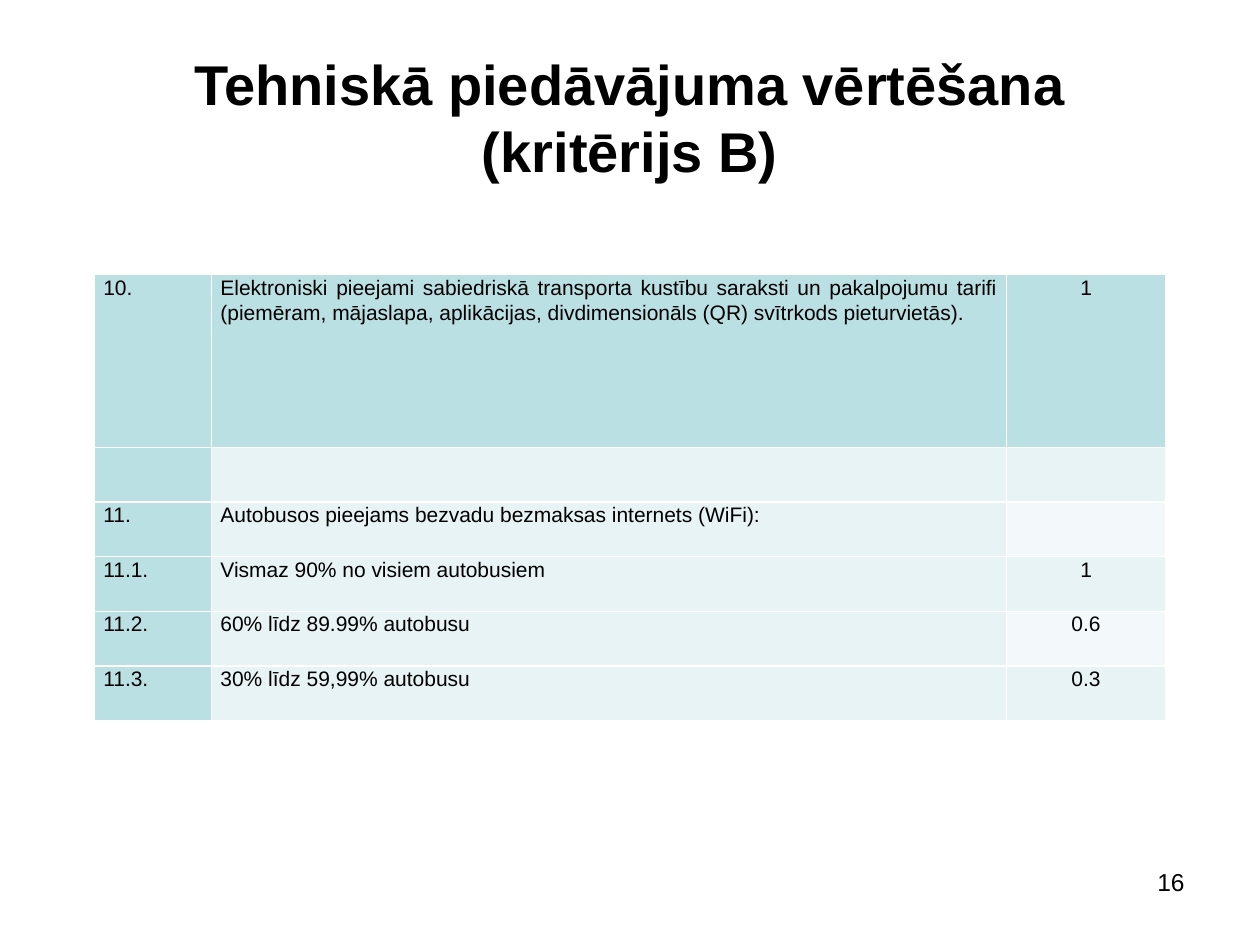
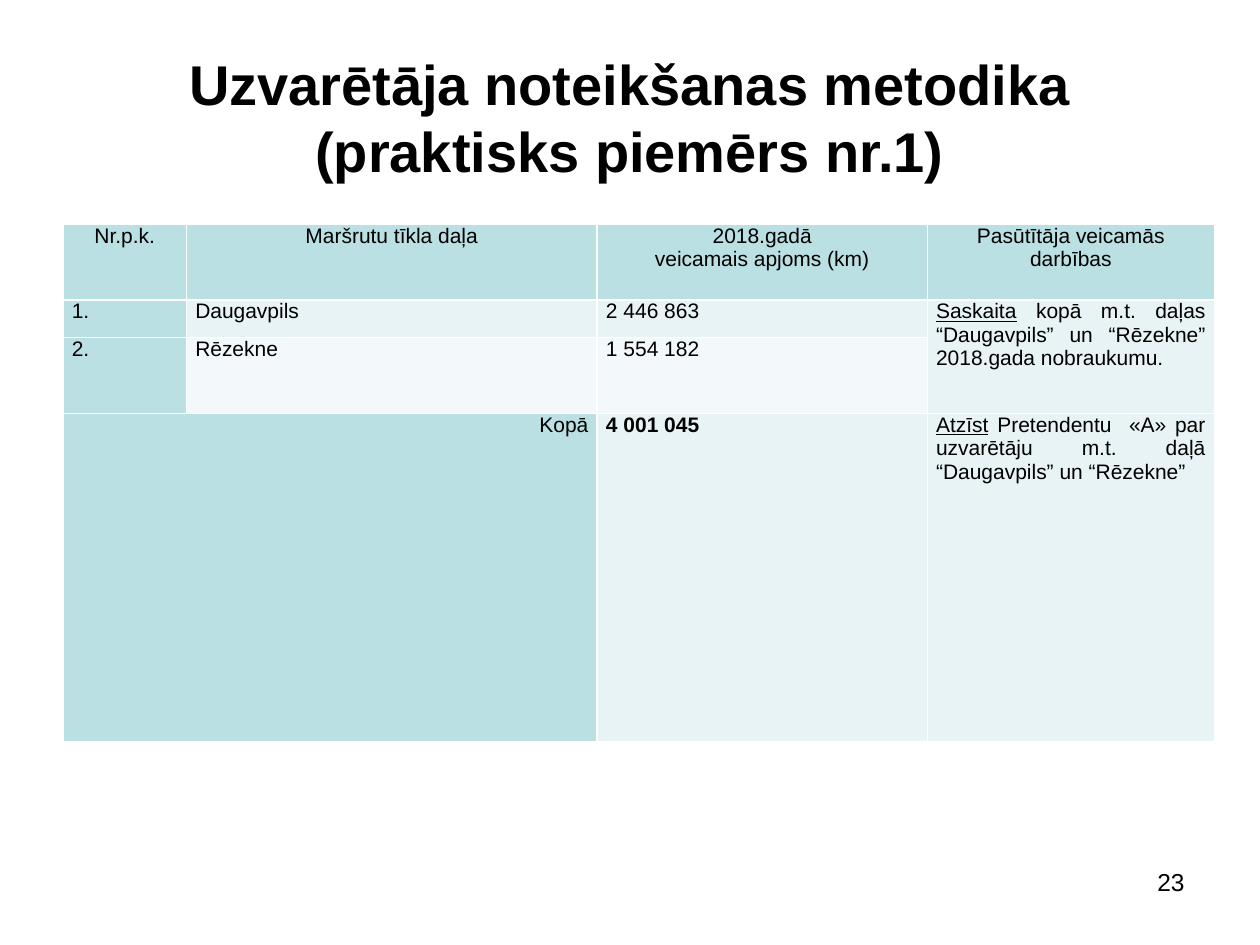
from lxml import etree
from pptx import Presentation
from pptx import util as u
from pptx.dml.color import RGBColor
from pptx.enum import text
from pptx.oxml import ns

Inches, Pt = u.Inches, u.Pt
ALIGN = text.PP_ALIGN
LEFT, CENTER, RIGHT, JUSTIFY = ALIGN.LEFT, ALIGN.CENTER, ALIGN.RIGHT, ALIGN.JUSTIFY

FONT = "Arial"
BLACK = RGBColor(0x00, 0x00, 0x00)
WHITE = RGBColor(0xFF, 0xFF, 0xFF)
HEADER_TEAL = RGBColor(0xBB, 0xE0, 0xE3)
BAND_DARK = RGBColor(0xE7, 0xF3, 0xF4)
BAND_LIGHT = RGBColor(0xF3, 0xF9, 0xFA)


def set_font(p, size, bold=False):
    p.font.name = FONT
    p.font.size = Pt(size)
    p.font.bold = bold
    p.font.color.rgb = BLACK


def add_text(s, box, content, size, align, anchor=text.MSO_ANCHOR.TOP, bold=False):
    tf = s.shapes.add_textbox(*map(Inches, box)).text_frame
    tf.word_wrap = True
    tf.vertical_anchor = anchor
    p = tf.paragraphs[0]
    p.text = content
    p.alignment = align
    set_font(p, size, bold)


def add_base_slide(prs, title, number):
    """Blank slide with the shared title and page number."""
    s = prs.slides.add_slide(prs.slide_layouts[6])
    add_text(s, (0.5, 0.3, 9, 1.25), title, 32, CENTER, text.MSO_ANCHOR.MIDDLE, True)
    add_text(s, (7.17, 6.83, 2.33, 0.52), number, 14, RIGHT)
    return s


def set_borders(cell, color=WHITE, width=1):
    tcPr = cell._tc.get_or_add_tcPr()
    for side in ("lnL", "lnR", "lnT", "lnB"):
        ln = etree.SubElement(tcPr, ns.qn(f"a:{side}"), w=str(Pt(width)))
        fill = etree.SubElement(ln, ns.qn("a:solidFill"))
        etree.SubElement(fill, ns.qn("a:srgbClr"), val=str(color))


def add_table(s, left, top, widths, heights, plain_cols=()):
    """Table with a teal first row and column; plain_cols have no banding."""
    frame = s.shapes.add_table(len(heights), len(widths), Inches(left), Inches(top),
                               Inches(sum(widths)), Inches(sum(heights)))
    table = frame.table
    table.first_row = table.horz_banding = False
    for col, width in zip(table.columns, widths):
        col.width = Inches(width)
    for r, height in enumerate(heights):
        table.rows[r].height = Inches(height)
        for c in range(len(widths)):
            cell = table.cell(r, c)
            cell.margin_left = cell.margin_right = Inches(0.07)
            cell.margin_top = cell.margin_bottom = 0
            set_borders(cell)
            if r == 0 or c == 0:
                color = HEADER_TEAL
            else:
                color = BAND_DARK if r % 2 or c in plain_cols else BAND_LIGHT
            cell.fill.solid()
            cell.fill.fore_color.rgb = color
    return table


def write_cell(cell, content, align, spacing=1.0, bold=False, underlined=""):
    """Fill a cell, one paragraph a line, after an optional underlined lead."""
    tf = cell.text_frame
    for i, line in enumerate(content.split("\n")):
        p = tf.paragraphs[0] if i == 0 else tf.add_paragraph()
        p.alignment = align
        p.line_spacing = spacing
        set_font(p, 12, bold)
        if underlined and i == 0:
            lead = p.add_run()
            lead.text = underlined
            lead.font.underline = True
        p.add_run().text = line


def add_criteria_slide(prs):
    s = add_base_slide(prs, "Tehniskā piedāvājuma vērtēšana\n(kritērijs B)", "16")
    criteria = [
        ("10.", "Elektroniski pieejami sabiedriskā transporta kustību saraksti un "
                "pakalpojumu tarifi (piemēram, mājaslapa, aplikācijas, divdimensionāls "
                "(QR) svītrkods pieturvietās).", "1"),
        ("", "", ""),
        ("11.", "Autobusos pieejams bezvadu bezmaksas internets (WiFi):", ""),
        ("11.1.", "Vismaz 90% no visiem autobusiem", "1"),
        ("11.2.", "60% līdz 89.99% autobusu", "0.6"),
        ("11.3.", "30% līdz 59,99% autobusu", "0.3"),
    ]
    heights = [1.37] + [0.434] * (len(criteria) - 1)
    table = add_table(s, 0.75, 2.18, [0.93, 6.31, 1.26], heights, plain_cols=(1,))
    for r, row in enumerate(criteria):
        for c, (content, align) in enumerate(zip(row, (LEFT, JUSTIFY, CENTER))):
            if content:
                write_cell(table.cell(r, c), content, align, spacing=1.07)


def add_winner_slide(prs):
    s = add_base_slide(prs, "Uzvarētāja noteikšanas metodika\n(praktisks piemērs nr.1)", "23")
    table = add_table(s, 0.5, 1.78, [0.98, 3.26, 2.62, 2.28], [0.6, 0.3, 0.6, 2.61])

    # Header row and route network parts
    headers = ["Nr.p.k.", "Maršrutu tīkla daļa", "2018.gadā\nveicamais apjoms (km)",
               "Pasūtītāja veicamās darbības"]
    for c, header in enumerate(headers):
        write_cell(table.cell(0, c), header, CENTER)
    parts = [("1.", "Daugavpils", "2 446 863"), ("2.", "Rēzekne", "1 554 182")]
    for r, row in enumerate(parts, 1):
        for c, content in enumerate(row):
            write_cell(table.cell(r, c), content, JUSTIFY)

    # Total row
    table.cell(3, 0).merge(table.cell(3, 1))
    write_cell(table.cell(3, 0), "Kopā", RIGHT)
    write_cell(table.cell(3, 2), "4 001 045", JUSTIFY, bold=True)

    # Actions of the contracting authority
    table.cell(1, 3).merge(table.cell(2, 3))
    write_cell(table.cell(1, 3), " kopā m.t. daļas “Daugavpils” un “Rēzekne” "
               "2018.gada nobraukumu.", JUSTIFY, underlined="Saskaita")
    write_cell(table.cell(3, 3), " Pretendentu  «A» par uzvarētāju m.t. daļā "
               "“Daugavpils” un “Rēzekne”", JUSTIFY, underlined="Atzīst")


def main():
    prs = Presentation()
    prs.slide_width, prs.slide_height = Inches(10), Inches(7.5)
    add_criteria_slide(prs)
    add_winner_slide(prs)
    prs.save("out.pptx")


if __name__ == "__main__":
    main()
